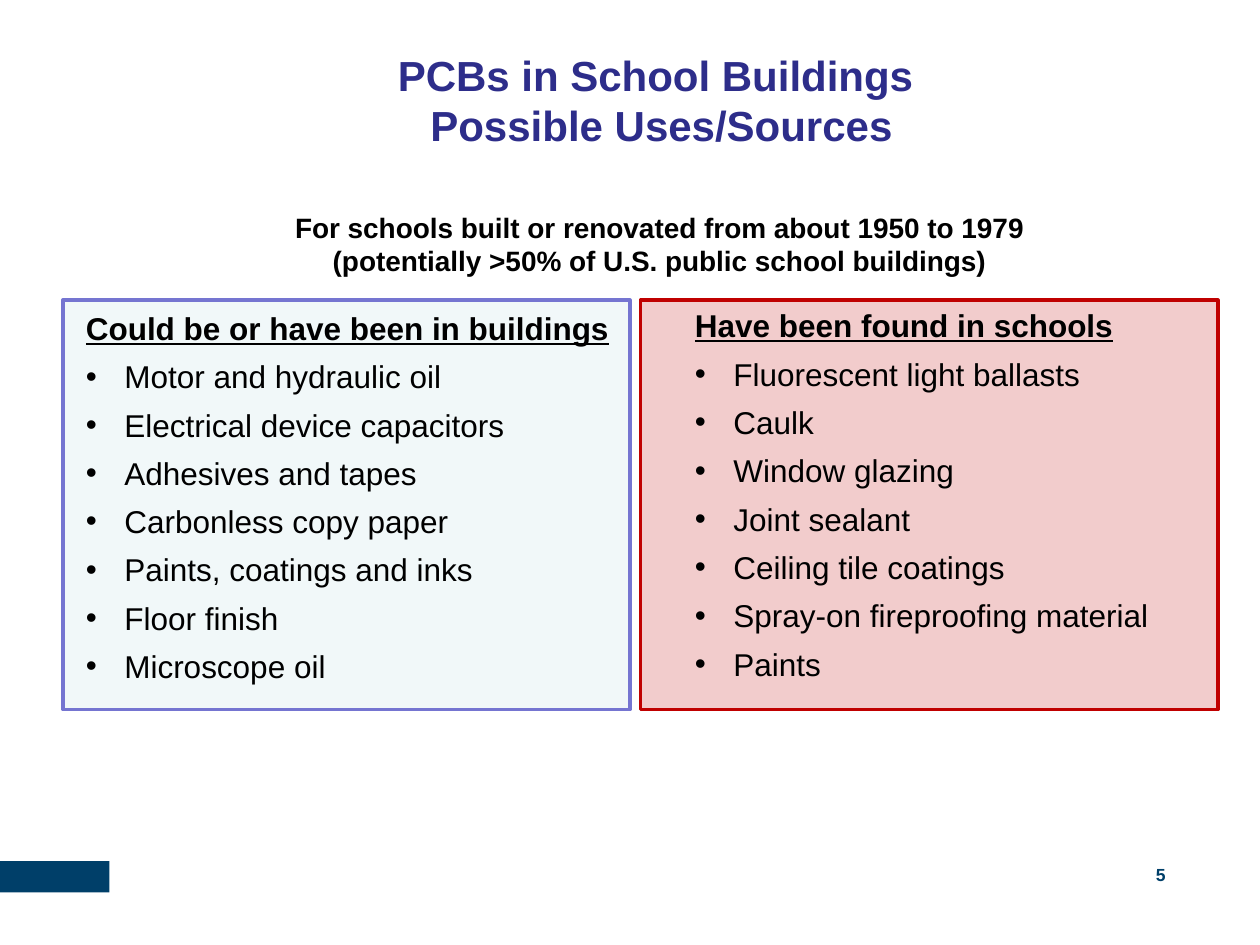
from lxml import etree
from pptx import Presentation
from pptx.dml.color import RGBColor
from pptx.enum.shapes import MSO_SHAPE as Shape
from pptx.enum.text import MSO_ANCHOR as Anchor, MSO_AUTO_SIZE as AutoSize, PP_ALIGN as Align
from pptx.oxml.ns import qn
from pptx.util import Pt

FONT = "Arial"
BLACK, NAVY, INDIGO = "000000", "003F69", "2D2D8A"
PANEL_TOP, PANEL_HEIGHT = 171.5, 234
BULLET_INDENT = 22


def color(hex_value):
    return RGBColor.from_string(hex_value)


def points(*lengths):
    return [Pt(length) for length in lengths]


def add_span(para, text, size, hex_value=BLACK, bold=False, underline=False):
    span = para.add_run()
    span.text = text
    span.font.name = FONT
    span.font.size = Pt(size)
    span.font.bold = bold
    span.font.underline = underline
    span.font.color.rgb = color(hex_value)


def next_para(frame, index):
    return frame.add_paragraph() if index else frame.paragraphs[0]


def add_centered_lines(frame, lines, size, hex_value):
    for index, line in enumerate(lines):
        para = next_para(frame, index)
        para.alignment = Align.CENTER
        add_span(para, line, size, hex_value, bold=True)


def add_rectangle(page, box, fill, opacity=None, line=None):
    rectangle = page.shapes.add_shape(Shape.RECTANGLE, *points(*box))
    rectangle.shadow.inherit = False
    rectangle.fill.solid()
    rectangle.fill.fore_color.rgb = color(fill)
    if opacity:
        tint = rectangle.fill._xPr.find(qn("a:solidFill"))[0]
        etree.SubElement(tint, qn("a:alpha"), val=str(opacity * 1000))
    if line:
        rectangle.line.color.rgb = color(line)
        rectangle.line.width = Pt(2)
    else:
        rectangle.line.fill.background()


def add_text_box(page, box):
    frame = page.shapes.add_textbox(*points(*box)).text_frame
    frame.word_wrap = True
    return frame


def add_bullet(para):
    properties = para._p.get_or_add_pPr()
    properties.set("marL", str(Pt(BULLET_INDENT)))
    properties.set("indent", str(-Pt(BULLET_INDENT)))
    etree.SubElement(properties, qn("a:buFont"), typeface=FONT)
    etree.SubElement(properties, qn("a:buChar"), char="•")


def add_title(page, box):
    title = page.shapes.title
    title.left, title.top, title.width, title.height = points(*box)
    frame = title.text_frame
    frame.auto_size = AutoSize.NONE
    frame.word_wrap = False
    frame.vertical_anchor = Anchor.TOP
    add_centered_lines(frame, ["PCBs in School Buildings ", "Possible Uses/Sources"], 24, INDIGO)


def add_subtitle(page, box):
    lines = [
        "For schools built or renovated from about 1950 to 1979",
        "(potentially >50% of U.S. public school buildings)",
    ]
    add_centered_lines(add_text_box(page, box), lines, 16, BLACK)


def add_panel(page, box, text_left, text_top, fill, line, heading, items):
    left, top, width, height = box
    add_rectangle(page, box, fill, opacity=20, line=line)
    frame = add_text_box(page, (left + text_left, top + text_top, width - text_left, height - text_top))
    for index, text in enumerate([heading] + items):
        para = next_para(frame, index)
        para.space_after = Pt(6)
        if index:
            add_bullet(para)
        add_span(para, text, 18, bold=index == 0, underline=index == 0)


def add_footer(page, box, number):
    left, top, width, height = box
    add_rectangle(page, (left, top, 62.5, height), NAVY)
    frame = add_text_box(page, (left + width - 150, top - 1.5, 150, height))
    frame.margin_left = frame.margin_top = frame.margin_right = frame.margin_bottom = 0
    frame.vertical_anchor = Anchor.MIDDLE
    para = frame.paragraphs[0]
    para.alignment = Align.RIGHT
    add_span(para, number, 10, NAVY, bold=True)


def main():
    deck = Presentation()
    deck.slide_width, deck.slide_height = points(720, 540)
    page = deck.slides.add_slide(deck.slide_layouts[5])

    add_footer(page, (0, 492, 666, 18), "5")
    add_title(page, (219, 24.5, 318, 66))
    add_panel(
        page, (366, PANEL_TOP, 330, PANEL_HEIGHT), 24, 0, "C00000", "C00000",
        "Have been found in schools",
        [
            "Fluorescent light ballasts",
            "Caulk",
            "Window glazing",
            "Joint sealant",
            "Ceiling tile coatings",
            "Spray-on fireproofing material",
            "Paints",
        ],
    )
    add_panel(
        page, (36, PANEL_TOP, 324, PANEL_HEIGHT), 6, 1.5, "BBE0E3", "7575D1",
        "Could be or have been in buildings",
        [
            "Motor and hydraulic oil",
            "Electrical device capacitors",
            "Adhesives and tapes",
            "Carbonless copy paper",
            "Paints, coatings and inks",
            "Floor finish",
            "Microscope oil",
        ],
    )
    add_subtitle(page, (152, 116.5, 450, 46))
    deck.save("out.pptx")


if __name__ == "__main__":
    main()
